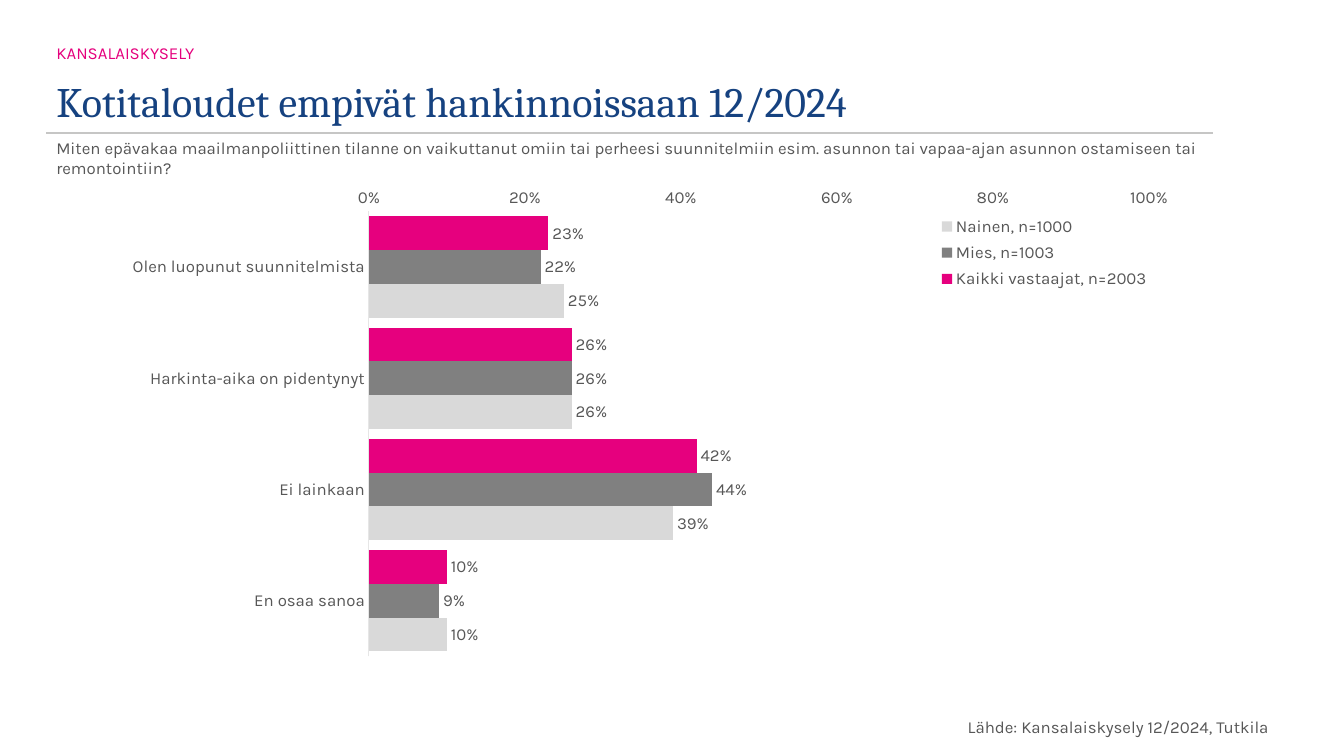
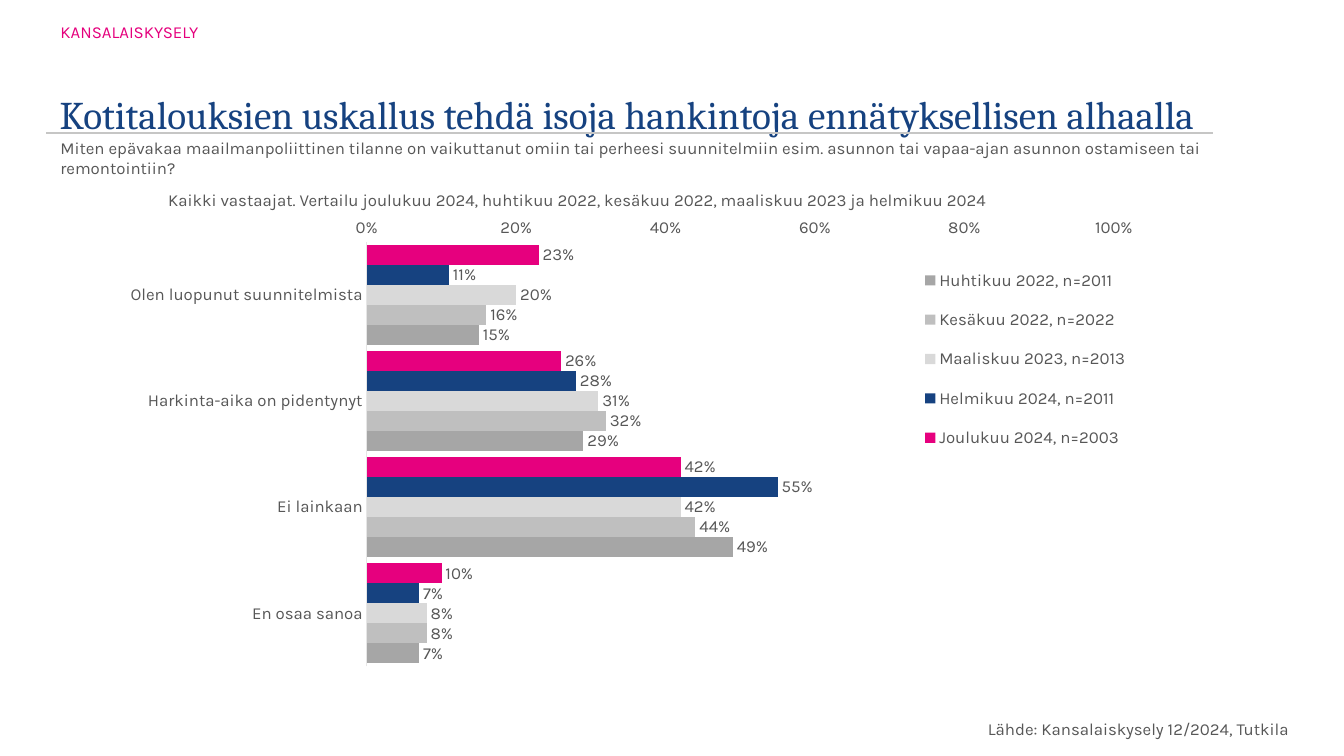
from dataclasses import dataclass

from lxml import etree
from pptx import Presentation
from pptx import util as u
from pptx.chart import data as cd
from pptx.dml.color import RGBColor
from pptx.enum import chart as ec, shapes, text
from pptx.oxml import ns


@dataclass(frozen=True)
class Theme:
    """Colours, fonts and sizes shared by the slides."""
    head: str = "Cambria"
    body: str = "Karla"
    size: int = 12
    navy: str = "164280"
    pink: str = "E5007D"
    ink: str = "575757"
    rule: str = "C6C6C5"
    axis: str = "E6E6E6"
    bar: str = "E6007E"
    dark: str = "808080"
    mid: str = "A6A6A6"
    soft: str = "BFBFBF"
    pale: str = "D9D9D9"


T = Theme()
TAG = "KANSALAISKYSELY"
ASK = ("Miten epävakaa maailmanpoliittinen tilanne on vaikuttanut omiin tai "
       "perheesi suunnitelmiin esim. asunnon tai vapaa-ajan asunnon "
       "ostamiseen tai remontointiin?")
SOURCE = "Lähde: Kansalaiskysely 12/2024, Tutkila"
CATS = ["Olen luopunut suunnitelmista", "Harkinta-aika on pidentynyt",
        "Ei lainkaan", "En osaa sanoa"]


def rgb(code):
    """Turn a hex code into a colour."""
    return RGBColor.from_string(code)


def style(font, name, size, color):
    """Set the face, size and colour of a font."""
    font.name, font.size = name, u.Pt(size)
    font.color.rgb = rgb(color)


def place(shape, box):
    """Move a shape to a box given in inches."""
    shape.left, shape.top, shape.width, shape.height = map(u.Inches, box)


def fill(shape, words, font, anchor=text.MSO_ANCHOR.TOP, gap=1.0):
    """Write one left-aligned paragraph into a shape."""
    frame = shape.text_frame
    frame.text = words
    frame.word_wrap = True
    frame.auto_size = text.MSO_AUTO_SIZE.NONE
    frame.vertical_anchor = anchor
    para = frame.paragraphs[0]
    para.alignment = text.PP_ALIGN.LEFT
    para.line_spacing = gap
    para.space_before = u.Pt(0)
    style(para.runs[0].font, *font)
    return para


def title(slide, words, box, size):
    """Place the slide title."""
    place(slide.shapes.title, box)
    fill(slide.shapes.title, words, (T.head, size, T.navy),
         text.MSO_ANCHOR.BOTTOM, 0.9)


def tag(slide, box):
    """Place the pink label above the title."""
    shape = slide.placeholders[1]
    place(shape, box)
    para = fill(shape, TAG, (T.body, T.size, T.pink), gap=1.2)
    props = para._p.get_or_add_pPr()
    props.set("marL", "0")
    props.set("indent", "0")
    etree.SubElement(props, ns.qn("a:buNone"))


def note(slide, words, box):
    """Add a grey text box."""
    shape = slide.shapes.add_textbox(*map(u.Inches, box))
    fill(shape, words, (T.body, T.size, T.ink))


def rule(slide):
    """Draw the thin line under the title."""
    ends = map(u.Inches, (0.46, 1.32, 12.03, 1.32))
    line = slide.shapes.add_connector(shapes.MSO_CONNECTOR.STRAIGHT, *ends)
    line.line.color.rgb = rgb(T.rule)
    line.line.width = u.Pt(1)
    etree.SubElement(line._element.spPr, ns.qn("a:effectLst"))


def layout(owner, spot, box, inner=False):
    """Fix the place of a chart part as shares of the chart."""
    for old in owner.findall(ns.qn("c:layout")):
        owner.remove(old)
    outer = etree.Element(ns.qn("c:layout"))
    owner.insert(spot, outer)
    hold = etree.SubElement(outer, ns.qn("c:manualLayout"))
    pairs = [("layoutTarget", "inner")] if inner else []
    pairs += [("xMode", "edge"), ("yMode", "edge")]
    pairs += zip("xywh", map(str, box))
    for key, val in pairs:
        etree.SubElement(hold, ns.qn("c:" + key)).set("val", val)


def axes(chart):
    """Format the category and value axes."""
    cat, val = chart.category_axis, chart.value_axis
    for axis in (cat, val):
        axis.has_major_gridlines = False
        axis.major_tick_mark = axis.minor_tick_mark = ec.XL_TICK_MARK.NONE
    cat.reverse_order = True
    cat.crosses = ec.XL_AXIS_CROSSES.MAXIMUM
    cat.format.line.color.rgb = rgb(T.axis)
    cat.format.line.width = u.Pt(0.75)
    val.minimum_scale, val.maximum_scale, val.major_unit = 0, 1, 0.2
    val.tick_labels.number_format = "0%"
    val.tick_labels.number_format_is_linked = False
    val.format.line.fill.background()


def bars(slide, rows, box, area, key):
    """Add a clustered bar chart from rows of name, colour and values."""
    data = cd.CategoryChartData(number_format="0%")
    data.categories = CATS
    for name, _, vals in rows:
        data.add_series(name, [val / 100 for val in vals])
    chart = slide.shapes.add_chart(
        ec.XL_CHART_TYPE.BAR_CLUSTERED, *map(u.Inches, box), data).chart
    chart.has_title = False
    style(chart.font, T.body, T.size, T.ink)
    axes(chart)
    plot = chart.plots[0]
    plot.gap_width, plot.overlap = 30, 0
    plot.vary_by_categories = False
    for series, (_, color, _) in zip(plot.series, rows):
        series.format.fill.solid()
        series.format.fill.fore_color.rgb = rgb(color)
        labels = series.data_labels
        labels.show_value = True
        labels.number_format = "0%"
        labels.number_format_is_linked = False
        labels.position = ec.XL_LABEL_POSITION.OUTSIDE_END
    chart.has_legend = True
    chart.legend.position = ec.XL_LEGEND_POSITION.RIGHT
    chart.legend.include_in_layout = False
    root = chart.element
    layout(root.find(".//" + ns.qn("c:plotArea")), 0, area, True)
    layout(root.find(".//" + ns.qn("c:legend")), 1, key)


def page(deck, words, size, box, label, left):
    """Add a slide with its title, label, line and question."""
    slide = deck.slides.add_slide(deck.slide_layouts[1])
    rule(slide)
    title(slide, words, box, size)
    tag(slide, label)
    note(slide, ASK, (left, 1.32, 11.82, 0.5))
    return slide


def groups(deck):
    """Build the slide that compares men and women."""
    slide = page(deck, "Kotitaloudet empivät hankinnoissaan 12/2024", 30,
                 (0.46, 0.33, 11.56, 0.98), (0.46, 0.33, 11.56, 0.22), 0.46)
    rows = [("Kaikki vastaajat, n=2003", T.bar, (23, 26, 42, 10)),
            ("Mies, n=1003", T.dark, (22, 26, 44, 9)),
            ("Nainen, n=1000", T.pale, (25, 26, 39, 10))]
    bars(slide, rows, (0.34, 1.75, 12.07, 5.61),
         (0.275, 0.062, 0.641, 0.787), (0.71, 0.06, 0.24, 0.15))
    note(slide, SOURCE, (9.5, 7.06, 3.7, 0.3))


def trend(deck):
    """Build the slide that compares survey rounds."""
    slide = page(deck, "Kotitalouksien uskallus tehdä isoja hankintoja "
                 "ennätyksellisen alhaalla", 28,
                 (0.49, 0.33, 11.53, 1.09), (0.5, 0.13, 11.52, 0.41), 0.5)
    note(slide, "Kaikki vastaajat. Vertailu joulukuu 2024, huhtikuu 2022, "
         "kesäkuu 2022, maaliskuu 2023 ja helmikuu 2024",
         (1.57, 1.83, 9.89, 0.3))
    rows = [("Joulukuu 2024, n=2003", T.bar, (23, 26, 42, 10)),
            ("Helmikuu 2024, n=2011", T.navy, (11, 28, 55, 7)),
            ("Maaliskuu 2023, n=2013", T.pale, (20, 31, 42, 8)),
            ("Kesäkuu 2022, n=2022", T.soft, (16, 32, 44, 8)),
            ("Huhtikuu 2022, n=2011", T.mid, (15, 29, 49, 7))]
    bars(slide, rows, (0.46, 2.09, 11.56, 4.99),
         (0.275, 0.062, 0.641, 0.844), (0.72, 0.08, 0.24, 0.43))
    note(slide, SOURCE, (9.7, 7.08, 3.6, 0.3))


def main():
    """Build and save the deck."""
    deck = Presentation()
    deck.slide_width, deck.slide_height = u.Inches(13.33), u.Inches(7.5)
    groups(deck)
    trend(deck)
    deck.save("out.pptx")


if __name__ == "__main__":
    main()
